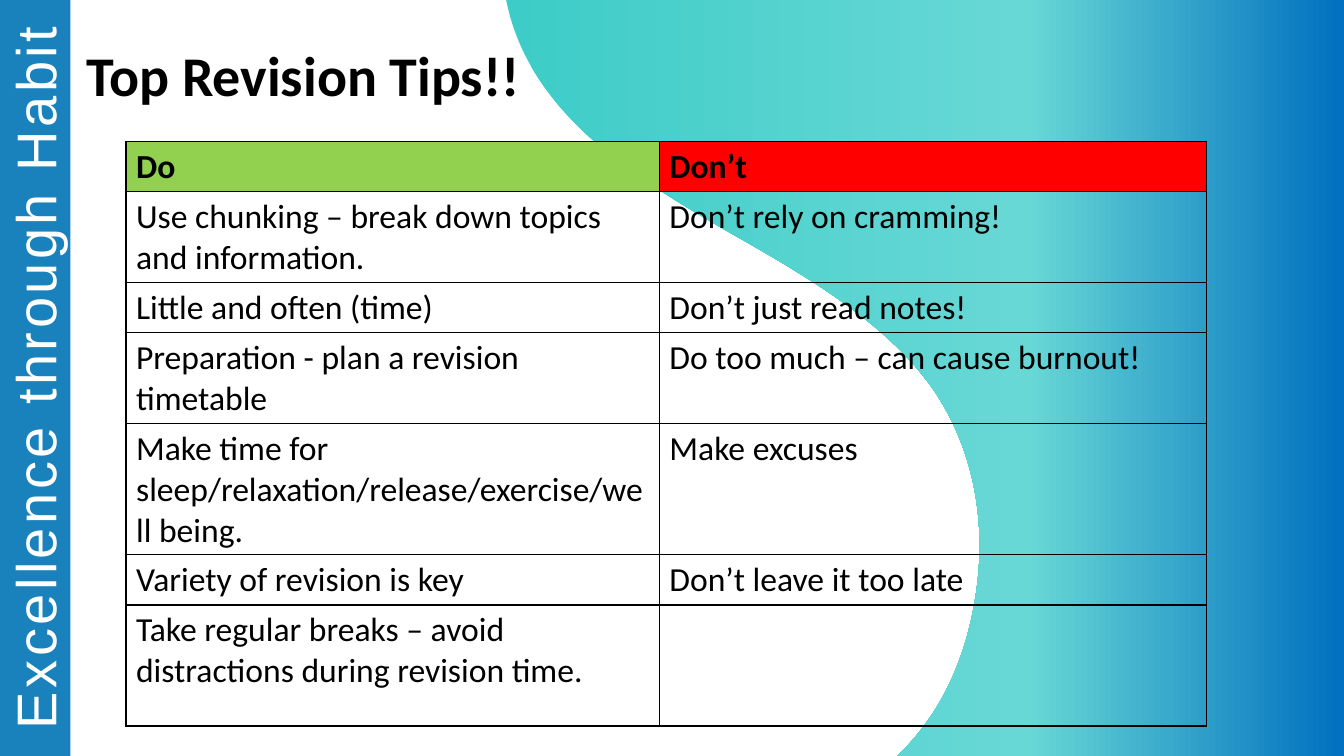
from pptx import Presentation
from pptx.util import Inches, Pt
from pptx.dml.color import RGBColor
from pptx.enum.text import PP_ALIGN, MSO_ANCHOR, MSO_AUTO_SIZE
from pptx.oxml import parse_xml
from pptx.oxml.ns import nsdecls, qn
from copy import deepcopy

COLORS = {
    "band": "1982BD", "white": "FFFFFF", "black": "000000",
    "do": "92D050", "dont": "FF0000",
    "teal": "3DCCC7", "aqua": "68D8D6", "blue": "0070C0",
}
TIPS = [
    ("Do", "Don’t"),
    ("Use chunking – break down topics and information.",
     "Don’t rely on cramming!"),
    ("Little and often (time)", "Don’t just read notes!"),
    ("Preparation - plan a revision timetable",
     "Do too much – can cause burnout!"),
    ("Make time for sleep/relaxation/release/exercise/well being.",
     "Make excuses"),
    ("Variety of revision is key", "Don’t leave it too late"),
    ("Take regular breaks – avoid distractions during revision time.", ""),
]
ROWS = [0.49, 0.84, 0.49, 0.84, 1.2, 0.49, 1.2]
COLS = [5.29, 5.43]

# Wave edge, from its foot up: a start point, then cubic curves,
# relative to the wave's left top corner
START = (3.86, 7.52)
CURVES = [
    ((3.88, 7.5), (3.9, 7.48), (3.92, 7.46)),
    ((4.34, 7.04), (4.56, 6.5), (4.65, 5.95)),
    ((4.77, 5.24), (4.66, 4.49), (4.24, 3.87)),
    ((3.76, 3.18), (2.94, 2.72), (2.17, 2.28)),
    ((1.39, 1.83), (0.6, 1.33), (0.21, 0.59)),
    ((0.11, 0.4), (0.04, 0.2), (0, 0)),
]


def color(name):
    return RGBColor.from_string(COLORS[name])


def style(par, size, font, name, bold=False):
    for run in par.runs:
        run.font.size = Pt(size)
        run.font.name = font
        run.font.bold = bold
        run.font.color.rgb = color(name)


def bend(shape, curves):
    """Turn the last straight sides of a freeform into cubic curves."""
    lines = list(shape._element.iter(qn("a:lnTo")))[-len(curves):]
    for line, curve in zip(lines, curves):
        points = "".join(
            f'<a:pt x="{Inches(x)}" y="{Inches(y)}"/>' for x, y in curve)
        line.addnext(parse_xml(
            f'<a:cubicBezTo {nsdecls("a")}>{points}</a:cubicBezTo>'))
        line.getparent().remove(line)


def add_band(slide, left, top, width, height):
    band = slide.shapes.add_shape(
        1, Inches(left), Inches(top), Inches(width), Inches(height))
    band.shadow.inherit = False
    band.fill.solid()
    band.fill.fore_color.rgb = color("band")
    band.line.fill.background()

    # Motto, turned to read upwards along the band
    deep = 0.77
    motto = slide.shapes.add_textbox(
        Inches(left + (width - height) / 2 - 0.01),
        Inches(top + (height - deep) / 2),
        Inches(height), Inches(deep))
    motto.rotation = 270
    motto.text_frame.word_wrap = True
    par = motto.text_frame.paragraphs[0]
    par.text = "Excellence through Habit"
    par.alignment = PP_ALIGN.CENTER
    style(par, 40, "Arial", "white")
    par.runs[0].font._element.set("spc", "250")


def add_wave(slide, left, top, width, height):
    corners = [(width, height), START] + [curve[-1] for curve in CURVES]
    pen = slide.shapes.build_freeform(
        Inches(left + width), Inches(top), scale=1.0)
    pen.add_line_segments(
        [(Inches(left + x), Inches(top + y)) for x, y in corners], close=True)
    wave = pen.convert_to_shape()
    bend(wave, CURVES)
    wave.shadow.inherit = False
    wave.line.fill.background()
    wave.fill.gradient()
    wave.fill.gradient_angle = 0
    # A third stop for the gradient
    last = wave.fill.gradient_stops[1]._gs
    last.addnext(deepcopy(last))
    stops = [(0, "teal"), (0.62, "aqua"), (1, "blue")]
    for stop, (place, name) in zip(wave.fill.gradient_stops, stops):
        stop.position = place
        stop.color.rgb = color(name)


def add_edges(cell):
    props = cell._tc.get_or_add_tcPr()
    for i, side in enumerate(("lnL", "lnR", "lnT", "lnB")):
        props.insert(i, parse_xml(
            f'<a:{side} {nsdecls("a")} w="12700"><a:solidFill>'
            f'<a:srgbClr val="{COLORS["black"]}"/></a:solidFill></a:{side}>'))


def add_tips(slide, left, top):
    table = slide.shapes.add_table(
        len(ROWS), len(COLS), Inches(left), Inches(top),
        Inches(sum(COLS)), Inches(sum(ROWS))).table
    table.first_row = table.horz_banding = False
    for col, width in zip(table.columns, COLS):
        col.width = Inches(width)
    for r, (height, texts) in enumerate(zip(ROWS, TIPS)):
        table.rows[r].height = Inches(height)
        for c, text in enumerate(texts):
            cell = table.cell(r, c)
            if r == 0:
                cell.fill.solid()
                cell.fill.fore_color.rgb = color(("do", "dont")[c])
            else:
                cell.fill.background()
            add_edges(cell)
            if text:
                cell.text_frame.text = text
                style(cell.text_frame.paragraphs[0], 24, "Calibri", "black",
                      bold=r == 0)


def set_title(slide, left, top, width, height):
    title = slide.shapes.title
    title.left, title.top = Inches(left), Inches(top)
    title.width, title.height = Inches(width), Inches(height)
    frame = title.text_frame
    frame.text = "Top Revision Tips!!"
    frame.word_wrap = False
    frame.auto_size = MSO_AUTO_SIZE.NONE
    frame.vertical_anchor = MSO_ANCHOR.TOP
    frame.paragraphs[0].alignment = PP_ALIGN.LEFT
    style(frame.paragraphs[0], 40, "Calibri", "black", bold=True)


def main():
    deck = Presentation()
    deck.slide_width, deck.slide_height = Inches(13.33), Inches(7.5)
    slide = deck.slides.add_slide(deck.slide_layouts[5])
    add_band(slide, 0, 0, 0.7, 7.5)
    add_wave(slide, 5.02, 0, 8.31, 7.52)
    add_tips(slide, 1.25, 1.4)
    set_title(slide, 0.76, 0.35, 4.55, 0.77)
    deck.save("out.pptx")


if __name__ == "__main__":
    main()
